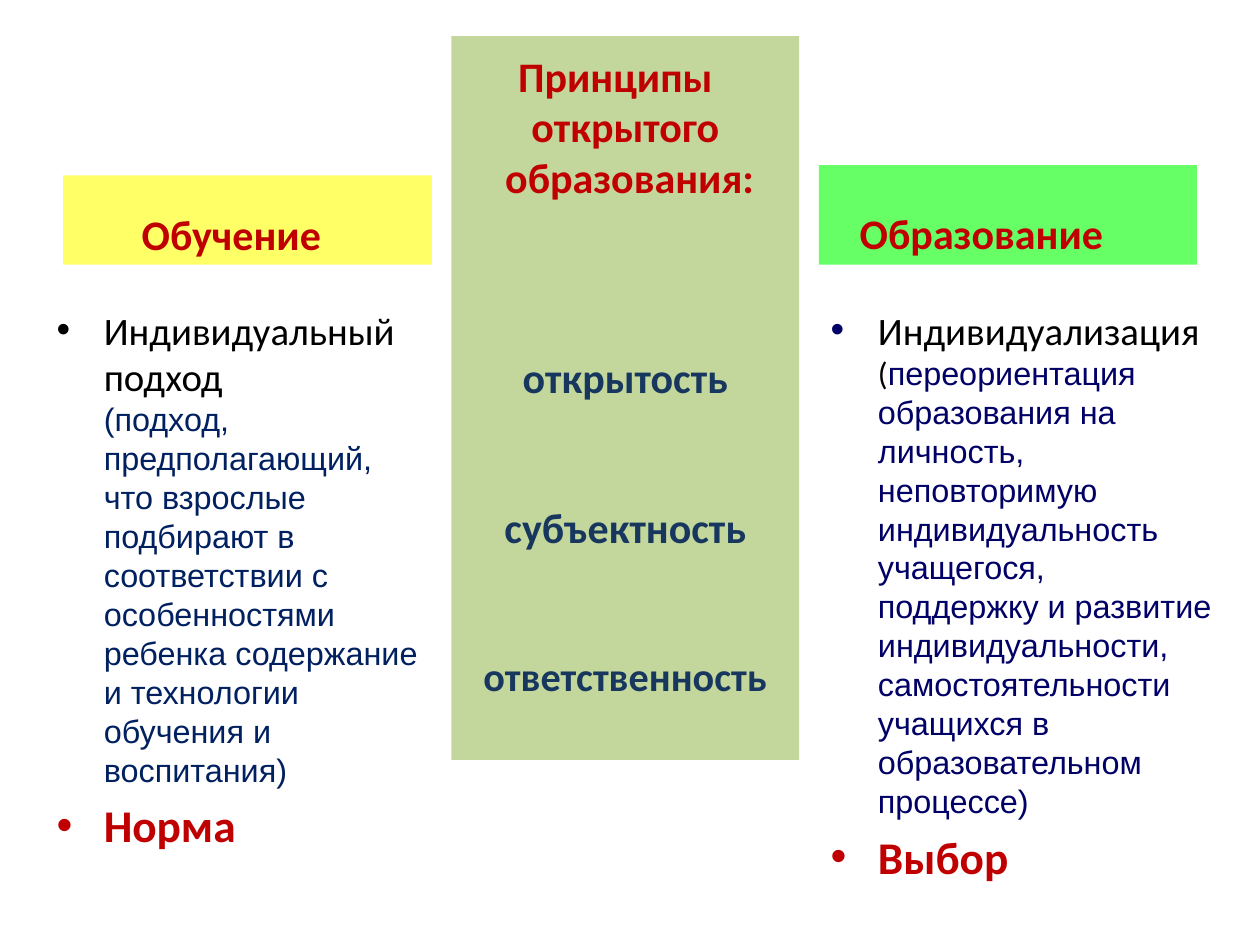
"""Build a slide comparing teaching and education around the principles of open education."""
from dataclasses import dataclass

from lxml import etree
from pptx import Presentation
from pptx.dml.color import RGBColor
from pptx.enum.shapes import MSO_SHAPE
from pptx.enum.text import MSO_ANCHOR, PP_ALIGN
from pptx.oxml.ns import qn
from pptx.util import Pt

RECTANGLE = MSO_SHAPE.RECTANGLE
TOP, BOTTOM = MSO_ANCHOR.TOP, MSO_ANCHOR.BOTTOM
LEFT, CENTER = PP_ALIGN.LEFT, PP_ALIGN.CENTER


@dataclass(frozen=True)
class Theme:
    red: str = "C00000"
    black: str = "000000"
    navy: str = "17375E"
    olive: str = "C3D69B"
    heading_font: str = "Calibri"
    detail_font: str = "Arial"
    heading_size: float = 24
    last_principle_size: float = 23
    lead_size: float = 22.2
    detail_size: float = 18.5
    result_size: float = 25.9
    detail_spacing: float = 22.24
    bullet_indent: float = 27


@dataclass(frozen=True)
class Box:
    left: float
    top: float
    width: float
    height: float


@dataclass(frozen=True)
class Line:
    text: str
    color: str
    size: float
    margin: float
    before: float = 0


@dataclass(frozen=True)
class Column:
    heading: str
    heading_box: Box
    heading_margin: float
    fill: str
    list_box: Box
    lead: str
    opening: str
    detail: str
    detail_color: str
    bullet_color: str
    result: str


THEME = Theme()
PANEL = Box(258, 20.7, 198.7, 413.6)
PANEL_SHIFT = 11.4
PRINCIPLES = (
    Line("Принципы", THEME.red, THEME.heading_size, 0),
    Line("открытого", THEME.red, THEME.heading_size, PANEL_SHIFT),
    Line("образования:", THEME.red, THEME.heading_size, PANEL_SHIFT + 5),
    Line("открытость", THEME.navy, THEME.heading_size, PANEL_SHIFT, 85.6),
    Line("субъектность", THEME.navy, THEME.heading_size, PANEL_SHIFT, 57),
    Line("ответственность", THEME.navy, THEME.last_principle_size, PANEL_SHIFT, 57),
)
COLUMNS = (
    Column("Обучение", Box(36, 100.2, 210.8, 51), 37.9, "FFFF66",
           Box(25.2, 171.4, 226.8, 311), "Индивидуальный подход", "",
           "(подход, предполагающий, что взрослые подбирают в соответствии с "
           "особенностями ребенка содержание и технологии обучения и воспитания)",
           "002060", THEME.black, "Норма"),
    Column("Образование", Box(468, 94.4, 216, 56.8), 16.2, "66FF66",
           Box(467.6, 171.4, 232.6, 311), "Индивидуализация", "(",
           "переориентация образования на личность, неповторимую индивидуальность "
           "учащегося, поддержку и развитие индивидуальности, самостоятельности "
           "учащихся в образовательном процессе)",
           "000066", "000066", "Выбор"),
)


def style_font(font, name: str, size: float, color: str, bold: bool) -> None:
    """Apply a complete font style."""
    font.name, font.size, font.bold = name, Pt(size), bold
    font.color.rgb = RGBColor.from_string(color)


def set_indent(paragraph, margin: float, hanging: float = 0) -> None:
    """Set the left margin and hanging indent of a paragraph."""
    properties = paragraph._p.get_or_add_pPr()
    properties.set("marL", str(Pt(margin)))
    properties.set("indent", str(-Pt(hanging)))


def add_bullet(paragraph, color: str) -> None:
    """Give a paragraph a round coloured bullet."""
    set_indent(paragraph, THEME.bullet_indent, THEME.bullet_indent)
    properties = paragraph._p.get_or_add_pPr()
    bullet_color = etree.SubElement(properties, qn("a:buClr"))
    etree.SubElement(bullet_color, qn("a:srgbClr"), val=color)
    etree.SubElement(properties, qn("a:buFont"), typeface="Arial")
    etree.SubElement(properties, qn("a:buChar"), char="•")


def add_panel(slide, box: Box, fill: str, lines: tuple[Line, ...], anchor, alignment):
    """Draw a filled rectangle holding bold lines of text."""
    shape = slide.shapes.add_shape(
        RECTANGLE, Pt(box.left), Pt(box.top), Pt(box.width), Pt(box.height))
    shape.shadow.inherit = False
    shape.fill.solid()
    shape.fill.fore_color.rgb = RGBColor.from_string(fill)
    shape.line.fill.background()
    frame = shape.text_frame
    frame.word_wrap, frame.vertical_anchor = True, anchor
    for index, line in enumerate(lines):
        paragraph = frame.add_paragraph() if index else frame.paragraphs[0]
        paragraph.text, paragraph.alignment = line.text, alignment
        paragraph.space_before = Pt(line.before)
        style_font(paragraph.font, THEME.heading_font, line.size, line.color, True)
        set_indent(paragraph, line.margin)
    return shape


def add_list(slide, column: Column) -> None:
    """Write the lead, its explanation and the result of a column."""
    box = column.list_box
    frame = slide.shapes.add_textbox(
        Pt(box.left), Pt(box.top), Pt(box.width), Pt(box.height)).text_frame
    frame.word_wrap = True

    lead = frame.paragraphs[0]
    lead.text = column.lead
    style_font(lead.font, THEME.heading_font, THEME.lead_size, THEME.black, False)
    add_bullet(lead, column.bullet_color)

    detail = frame.add_paragraph()
    detail.line_spacing = Pt(THEME.detail_spacing)
    set_indent(detail, THEME.bullet_indent)
    if column.opening:
        opening = detail.add_run()
        opening.text = column.opening
        style_font(opening.font, THEME.heading_font, THEME.detail_size, THEME.black, False)
    explanation = detail.add_run()
    explanation.text = column.detail
    style_font(explanation.font, THEME.detail_font, THEME.detail_size,
               column.detail_color, False)

    result = frame.add_paragraph()
    result.text, result.space_before = column.result, Pt(5)
    style_font(result.font, THEME.heading_font, THEME.result_size, THEME.red, True)
    add_bullet(result, THEME.red)


def main() -> None:
    """Create and save the presentation."""
    presentation = Presentation()
    presentation.slide_width, presentation.slide_height = Pt(720), Pt(540)
    slide = presentation.slides.add_slide(presentation.slide_layouts[6])
    panel = add_panel(slide, PANEL, THEME.olive, PRINCIPLES, TOP, CENTER)
    panel.text_frame.margin_left, panel.text_frame.margin_right = Pt(0), Pt(PANEL_SHIFT)
    panel.text_frame.margin_top = Pt(8)
    for column in COLUMNS:
        heading = Line(column.heading, THEME.red, THEME.heading_size, column.heading_margin)
        add_panel(slide, column.heading_box, column.fill, (heading,), BOTTOM, LEFT)
        add_list(slide, column)
    presentation.save("out.pptx")


if __name__ == "__main__":
    main()
